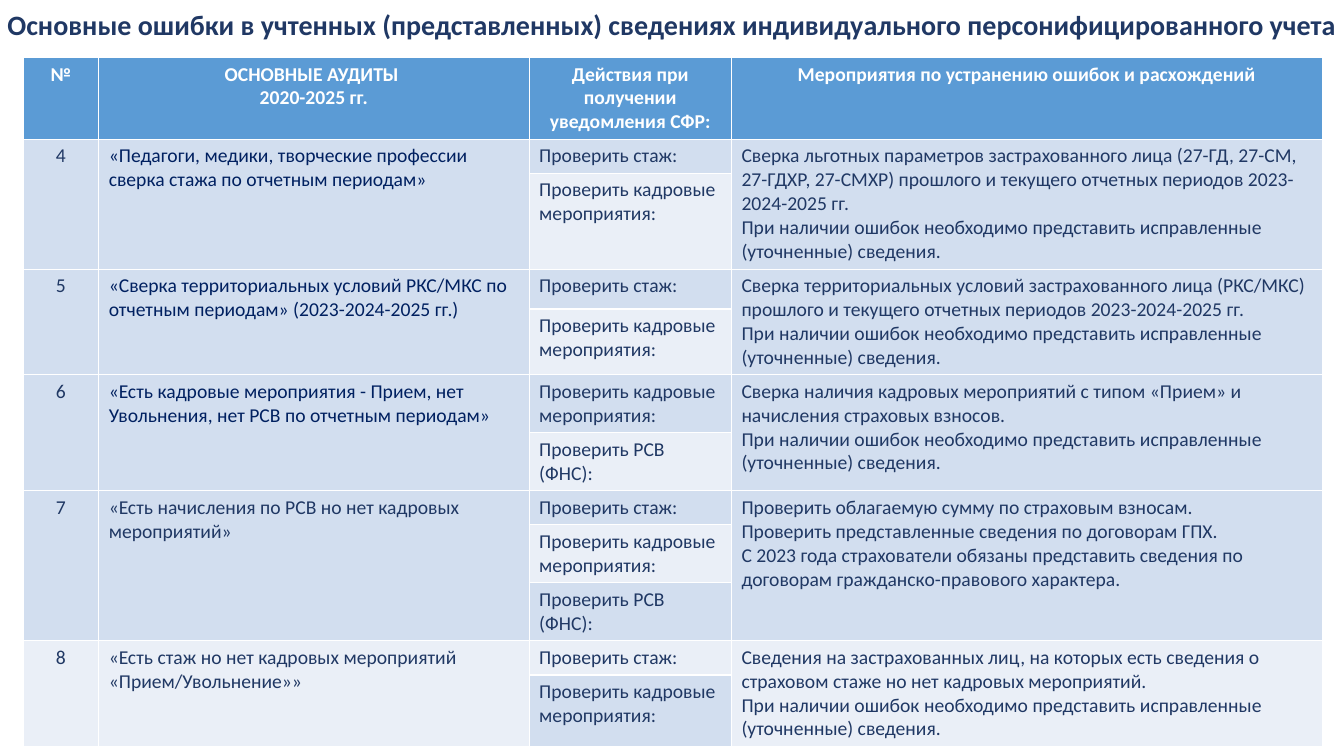
"""Builds the slide on common errors in personal insurance records."""
from typing import NamedTuple

from pptx import Presentation as Deck
from pptx.dml.color import RGBColor as Rgb
from pptx.enum.text import MSO_AUTO_SIZE as Fit, PP_ALIGN as Align
from pptx.util import Pt

WHITE = Rgb(0xFF, 0xFF, 0xFF)
BLUE = Rgb(0x5B, 0x9B, 0xD5)
NAVY = Rgb(0x20, 0x38, 0x64)
DEEP = Rgb(0x00, 0x20, 0x60)
BANDS = (Rgb(0xEA, 0xEF, 0xF7), Rgb(0xD2, 0xDE, 0xEF))

BODY = {"name": "Calibri", "size": Pt(14), "bold": False}
HEAD = {**BODY, "bold": True}
TITLE = {**HEAD, "size": Pt(20)}

WIDTHS = (54, 307.5, 144.5, 422)
HEAD_TALL = 58.5
TERM = "Проверить стаж:"
STAFF = "Проверить кадровые мероприятия:"
DUES = "Проверить РСВ (ФНС):"
AMEND = ("При наличии ошибок необходимо представить исправленные "
         "(уточненные) сведения.")


class Step(NamedTuple):
    text: str
    tall: float


class Audit(NamedTuple):
    name: str
    ink: Rgb
    steps: tuple[Step, ...]
    fixes: tuple[str, ...]


HEADS = (
    ("№",),
    ("ОСНОВНЫЕ АУДИТЫ ", "2020-2025 гг."),
    ("Действия при получении уведомления СФР:",),
    ("Мероприятия по устранению ошибок и расхождений",),
)
AUDITS = (
    Audit("«Педагоги, медики, творческие профессии сверка стажа по отчетным периодам»",
          DEEP, (Step(TERM, 23.5), Step(STAFF, 68.5)),
          ("Сверка льготных параметров застрахованного лица (27-ГД, 27-СМ, "
           "27-ГДХР, 27-СМХР) прошлого и текущего отчетных периодов "
           "2023-2024-2025 гг.", AMEND)),
    Audit("«Сверка территориальных условий РКС/МКС по отчетным периодам» "
          "(2023-2024-2025 гг.)",
          DEEP, (Step(TERM, 28.5), Step(STAFF, 46.5)),
          ("Сверка территориальных условий застрахованного лица (РКС/МКС) "
           "прошлого и текущего отчетных периодов 2023-2024-2025 гг.", AMEND)),
    Audit("«Есть кадровые мероприятия - Прием, нет Увольнения, нет РСВ по "
          "отчетным периодам»",
          DEEP, (Step(STAFF, 41.5), Step(DUES, 41.5)),
          ("Сверка наличия кадровых мероприятий с типом «Прием» и начисления "
           "страховых взносов.", AMEND)),
    Audit("«Есть начисления по РСВ но нет кадровых мероприятий»",
          NAVY, (Step(TERM, 24), Step(STAFF, 41.5), Step(DUES, 41)),
          ("Проверить облагаемую сумму по страховым взносам.",
           "Проверить представленные сведения по договорам ГПХ.",
           "С 2023 года страхователи обязаны представить сведения по "
           "договорам гражданско-правового характера.")),
    Audit("«Есть стаж но нет кадровых мероприятий «Прием/Увольнение»»",
          NAVY, (Step(TERM, 24.5), Step(STAFF, 51)),
          ("Сведения на застрахованных лиц, на которых есть сведения о "
           "страховом стаже но нет кадровых мероприятий.", AMEND)),
)


def write(frame, lines: tuple[str, ...], form: dict, ink: Rgb, side: Align) -> None:
    """Fill a text frame with one paragraph per line."""
    for num, line in enumerate(lines):
        para = frame.add_paragraph() if num else frame.paragraphs[0]
        para.alignment = side
        run = para.add_run()
        run.text = line
        for key, value in form.items():
            setattr(run.font, key, value)
        run.font.color.rgb = ink


def paint(cell, fill: Rgb) -> None:
    """Give a cell a solid fill."""
    cell.fill.solid()
    cell.fill.fore_color.rgb = fill


def draw_audit(grid, top: int, num: int, audit: Audit) -> None:
    """Write one audit across the rows of its steps."""
    last = top + len(audit.steps) - 1
    for row, step in enumerate(audit.steps, top):
        grid.rows[row].height = Pt(step.tall)
        for col in range(len(WIDTHS)):
            paint(grid.cell(row, col), BANDS[row % 2])
        write(grid.cell(row, 2).text_frame, (step.text,), BODY, NAVY, Align.LEFT)
    for col, lines, ink, side in (
        (0, (str(num),), NAVY, Align.CENTER),
        (1, (audit.name,), audit.ink, Align.LEFT),
        (3, audit.fixes, NAVY, Align.LEFT),
    ):
        cell = grid.cell(top, col)
        cell.merge(grid.cell(last, col))
        write(cell.text_frame, lines, BODY, ink, side)


def draw_table(slide) -> None:
    """Add the table of audits."""
    steps = [step for audit in AUDITS for step in audit.steps]
    tall = HEAD_TALL + sum(step.tall for step in steps)
    grid = slide.shapes.add_table(len(steps) + 1, len(WIDTHS), Pt(16.5), Pt(41),
                                  Pt(sum(WIDTHS)), Pt(tall)).table
    grid.rows[0].height = Pt(HEAD_TALL)
    for col, (wide, lines) in enumerate(zip(WIDTHS, HEADS)):
        grid.columns[col].width = Pt(wide)
        cell = grid.cell(0, col)
        paint(cell, BLUE)
        write(cell.text_frame, lines, HEAD, WHITE, Align.CENTER)
    top = 1
    for num, audit in enumerate(AUDITS, 4):
        draw_audit(grid, top, num, audit)
        top += len(audit.steps)


def draw_title(slide) -> None:
    """Add the title over the full slide width."""
    frame = slide.shapes.add_textbox(0, 0, Pt(960), Pt(29)).text_frame
    form = {"word_wrap": True, "auto_size": Fit.SHAPE_TO_FIT_TEXT,
            "margin_left": 0, "margin_right": 0,
            "margin_top": Pt(5), "margin_bottom": 0}
    for key, value in form.items():
        setattr(frame, key, value)
    write(frame, ("Основные ошибки в учтенных (представленных) сведениях "
                  "индивидуального персонифицированного учета",),
          TITLE, NAVY, Align.CENTER)


def main() -> None:
    """Build and save the deck."""
    deck = Deck()
    deck.slide_width, deck.slide_height = Pt(960), Pt(540)
    slide = deck.slides.add_slide(deck.slide_layouts[6])
    draw_table(slide)
    draw_title(slide)
    deck.save("out.pptx")


if __name__ == "__main__":
    main()
